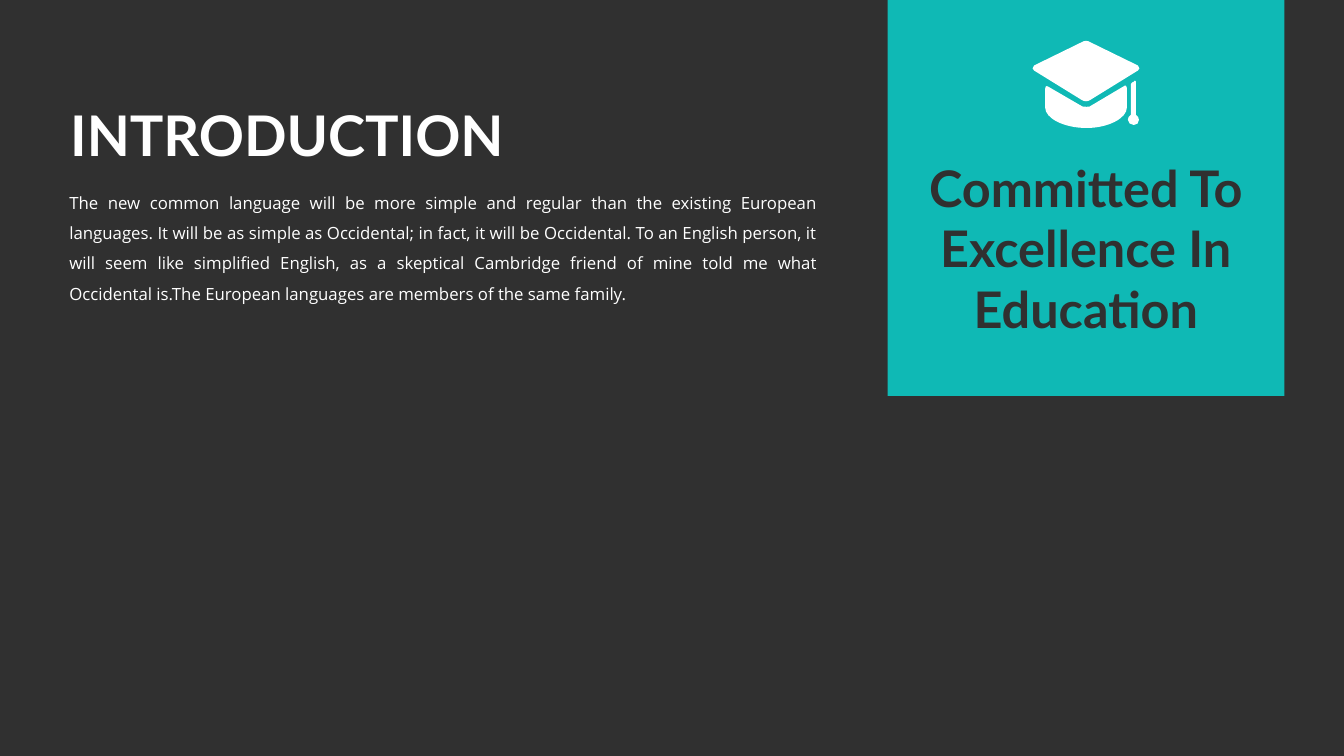
"""Build the introduction slide with its education panel."""
import lxml.etree
import pptx
import pptx.dml.color
import pptx.enum.shapes
import pptx.enum.text
import pptx.oxml.ns
import pptx.util

Cm = pptx.util.Cm
RGBColor = pptx.dml.color.RGBColor
Align = pptx.enum.text.PP_ALIGN
Anchor = pptx.enum.text.MSO_ANCHOR

DARK = RGBColor(0x30, 0x30, 0x30)
TEAL = RGBColor(0x0F, 0xB9, 0xB5)
WHITE = RGBColor(0xFF, 0xFF, 0xFF)

INTRODUCTION = (
    "The new common language will be more simple and regular than the existing "
    "European languages. It will be as simple as Occidental; in fact, it will be "
    "Occidental. To an English person, it will seem like simplified English, as a "
    "skeptical Cambridge friend of mine told me what Occidental is."
    "The European languages are members of the same family."
)

# Hundredths of an inch: one point makes a line, three make a Bézier curve.
CAP_BASE = [
    [(1084, 104)], [(1082, 106), (1080, 106), (1078, 106)],
    [(1075, 106), (1073, 106), (1071, 104)], [(1040, 86)],
    [(1040, 86), (1037, 84), (1037, 88)], [(1037, 92), (1037, 105), (1037, 105)],
    [(1037, 105), (1037, 106), (1037, 107)], [(1037, 117), (1055, 127), (1078, 127)],
    [(1100, 127), (1118, 117), (1118, 107)], [(1118, 106), (1118, 105), (1118, 105)],
    [(1118, 105), (1118, 91), (1118, 87)], [(1118, 84), (1116, 85), (1116, 85)],
    [(1084, 104)],
]
CAP_BOARD = [
    [(1129, 70)], [(1131, 69), (1131, 67), (1129, 65)], [(1082, 42)],
    [(1079, 40), (1076, 40), (1073, 42)], [(1026, 65)],
    [(1024, 67), (1024, 69), (1026, 70)], [(1073, 99)],
    [(1076, 101), (1079, 101), (1082, 99)],
]
CAP_TASSEL = [
    [(1127, 113)], [(1127, 105), (1127, 81), (1127, 81)],
    [(1127, 81), (1127, 80), (1126, 80)], [(1125, 81), (1124, 82), (1123, 82)],
    [(1122, 83), (1122, 84), (1122, 84)], [(1122, 84), (1122, 106), (1122, 113)],
    [(1122, 114), (1122, 114), (1122, 114)], [(1120, 115), (1119, 117), (1119, 119)],
    [(1119, 122), (1122, 124), (1125, 124)], [(1128, 124), (1130, 122), (1130, 119)],
    [(1130, 117), (1129, 115), (1127, 114)], [(1127, 114), (1127, 114), (1127, 113)],
]


def write_text(shape, text, font, size, color, bold=False, align=None,
               spacing=None, anchor=Anchor.TOP, padding=Cm(0.13)):
    frame = shape.text_frame
    frame.word_wrap = True
    frame.auto_size = pptx.enum.text.MSO_AUTO_SIZE.SHAPE_TO_FIT_TEXT
    frame.vertical_anchor = anchor
    frame.margin_left = frame.margin_right = Cm(0.25)
    frame.margin_top = frame.margin_bottom = padding
    paragraph = frame.paragraphs[0]
    paragraph.alignment = align
    paragraph.line_spacing = spacing
    run = paragraph.add_run()
    run.text = text
    run.font.name = font
    run.font.size = pptx.util.Pt(size)
    run.font.bold = bold
    run.font.color.rgb = color


presentation = pptx.Presentation()
presentation.slide_width = Cm(33.87)
presentation.slide_height = Cm(19.05)
slide = presentation.slides.add_slide(presentation.slide_layouts[5])
slide.background.fill.solid()
slide.background.fill.fore_color.rgb = DARK

panel = slide.shapes.add_shape(
    pptx.enum.shapes.MSO_SHAPE.RECTANGLE, Cm(22.37), Cm(0), Cm(10), Cm(9.98))
panel.shadow.inherit = False
panel.fill.solid()
panel.fill.fore_color.rgb = TEAL
panel.line.fill.background()

body = slide.shapes.add_textbox(Cm(1.5), Cm(4.47), Cm(19.36), Cm(3.25))
write_text(body, INTRODUCTION, font="Open Sans", size=12, color=WHITE,
           align=Align.JUSTIFY, spacing=1.5)

motto = slide.shapes.add_textbox(Cm(22.88), Cm(3.83), Cm(8.97), Cm(4.88))
write_text(motto, "Committed To Excellence In Education", font="Lato", size=36,
           color=DARK, bold=True, align=Align.CENTER)

cap = slide.shapes.add_group_shape()
for segments in (CAP_BASE, CAP_BOARD, CAP_TASSEL):
    points = [point for segment in segments for point in segment]
    builder = cap.shapes.build_freeform(*points[0], scale=Cm(2.54) / 100)
    builder.add_line_segments(points[1:], close=True)
    piece = builder.convert_to_shape()
    piece.shadow.inherit = False
    piece.fill.solid()
    piece.fill.fore_color.rgb = WHITE
    piece.line.fill.background()
    lines = iter(piece.element.findall(".//" + pptx.oxml.ns.qn("a:lnTo")))
    for segment in segments[1:]:
        steps = [next(lines) for point in segment]
        if len(steps) == 3:
            curve = lxml.etree.Element(pptx.oxml.ns.qn("a:cubicBezTo"))
            steps[0].addprevious(curve)
            for step in steps:
                curve.append(step[0])
                step.getparent().remove(step)

title = slide.shapes.title
title.left, title.top, title.width, title.height = Cm(1.52), Cm(2.41), Cm(22.91), Cm(2.13)
write_text(title, "INTRODUCTION", font="Lato", size=40, color=WHITE, bold=True,
           align=Align.LEFT, spacing=0.9, anchor=Anchor.MIDDLE, padding=Cm(0.3))

presentation.save("out.pptx")
